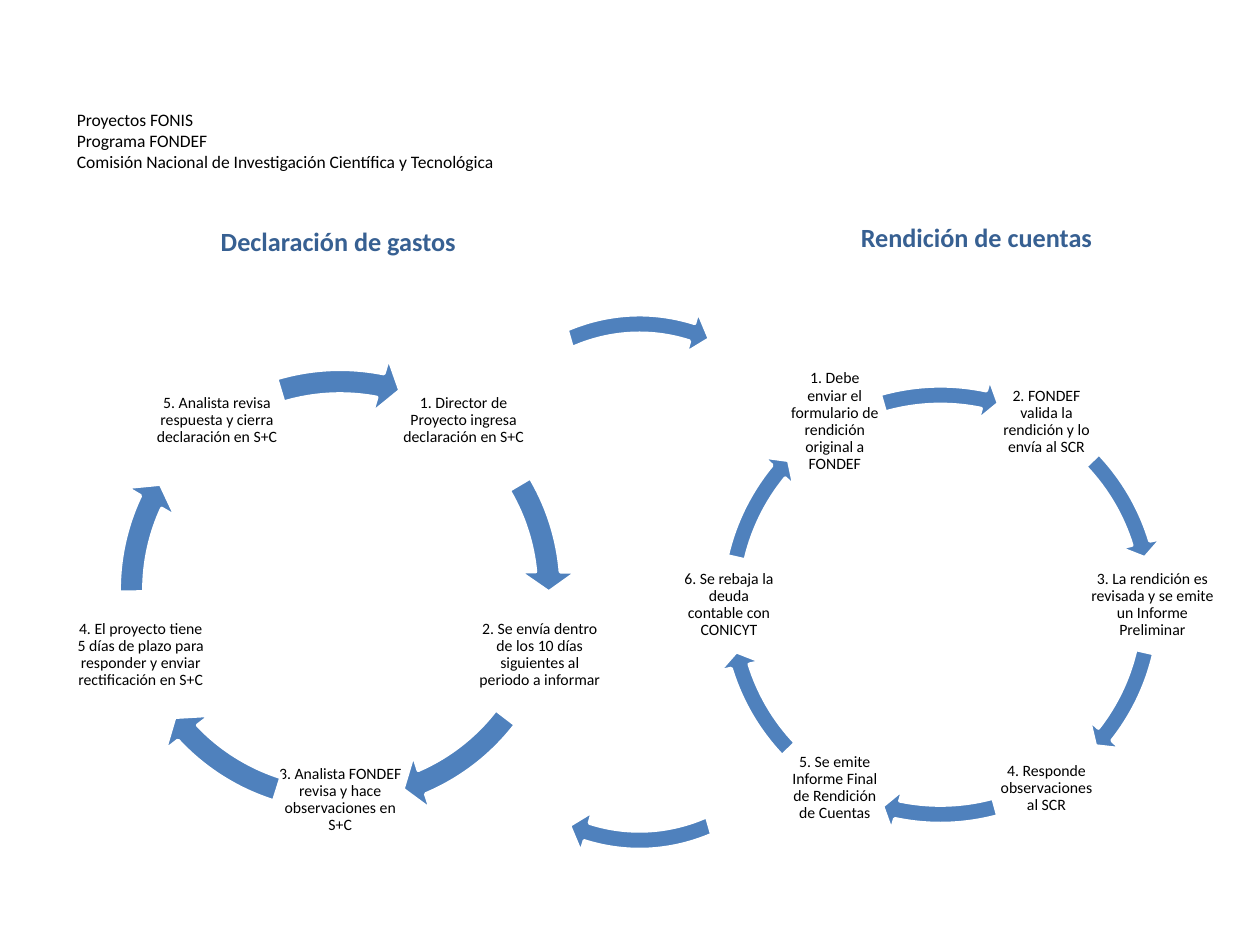
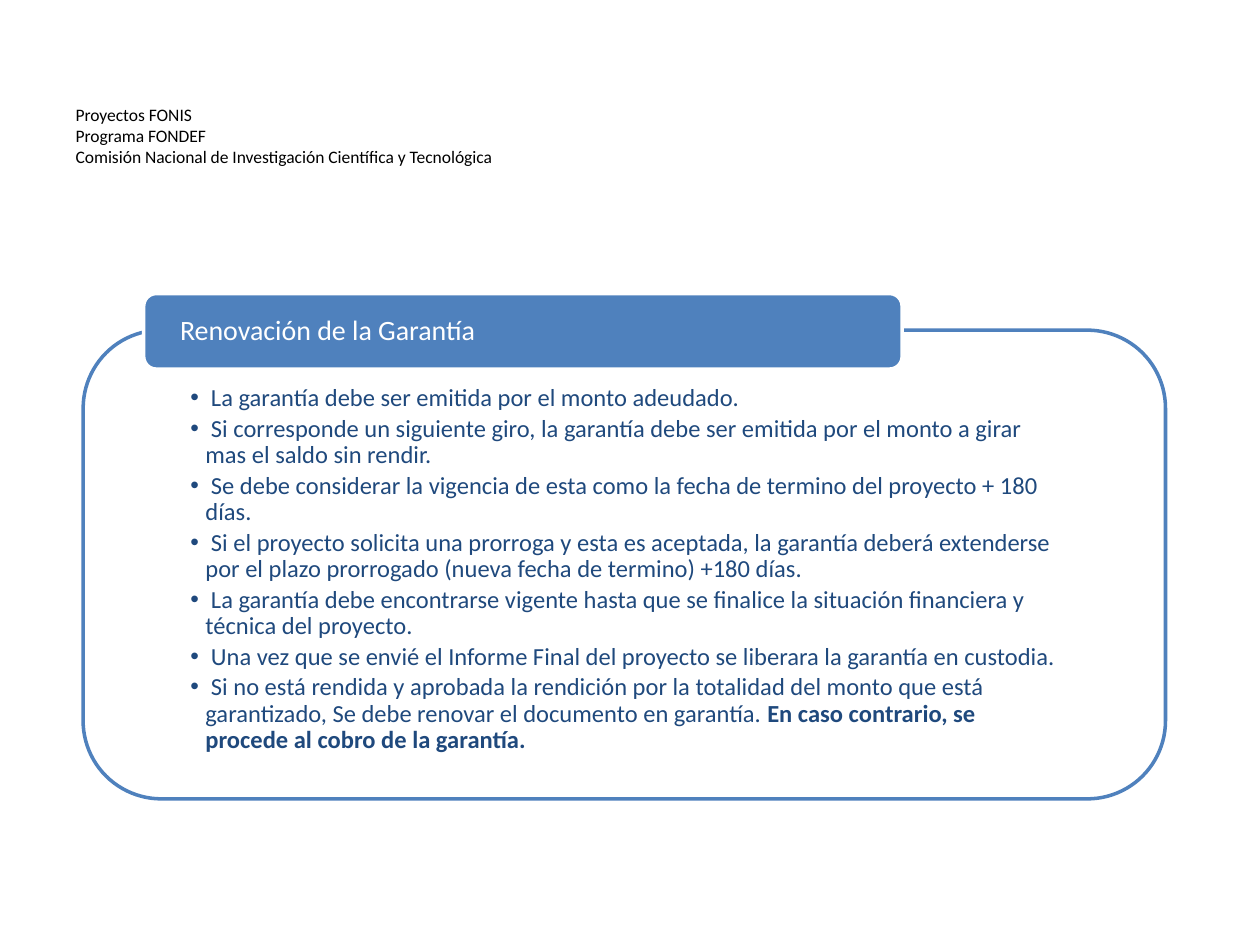
import math

import pptx
import pptx.dml.color
import pptx.enum.shapes
import pptx.enum.text
import pptx.util
from lxml import etree
from pptx.oxml.ns import qn

# Shared colours, font and grid (100 columns by 75 rows)
BLUE = pptx.dml.color.RGBColor(0x4F, 0x81, 0xBD)
HEADING_BLUE = pptx.dml.color.RGBColor(0x37, 0x60, 0x92)
LIST_BLUE = pptx.dml.color.RGBColor(0x1F, 0x49, 0x7D)
BLACK = pptx.dml.color.RGBColor(0, 0, 0)
WHITE = pptx.dml.color.RGBColor(0xFF, 0xFF, 0xFF)
FONT = "Calibri"
SLIDE_WIDTH = pptx.util.Inches(10)
SLIDE_HEIGHT = pptx.util.Inches(7.5)
CELL = SLIDE_WIDTH / 100

SHAPE = pptx.enum.shapes.MSO_SHAPE
ALIGN = pptx.enum.text.PP_ALIGN
ANCHOR = pptx.enum.text.MSO_ANCHOR
AUTO_SIZE = pptx.enum.text.MSO_AUTO_SIZE

AGENCY = ("Proyectos FONIS\vPrograma FONDEF\v"
          "Comisión Nacional de Investigación Científica y Tecnológica")

# Each step: text, label width, start and end angle of the arrow that leaves it
EXPENSE_STEPS = [
    ("1. Director de Proyecto ingresa declaración en S+C", 10, 329.4, 354.9),
    ("2. Se envía dentro de los 10 días siguientes al periodo a informar",
     10, 37.5, 66.9),
    ("3. Analista FONDEF revisa y hace observaciones en S+C", 10, 107.5, 136.9),
    ("4. El proyecto tiene 5 días de plazo para responder y enviar "
     "rectificación en S+C", 10.7, 179.5, 205),
    ("5. Analista revisa respuesta y cierra declaración en S+C",
     10, 253.3, 281.1),
]
ACCOUNT_STEPS = [
    ("1. Debe enviar el formulario de rendición original a FONDEF",
     7.5, 254, 281.9),
    ("2. FONDEF valida la rendición y lo envía al SCR", 7.5, 316.4, 342.9),
    ("3. La rendición es revisada y se emite un Informe Preliminar",
     10.1, 12.9, 38.2),
    ("4. Responde observaciones al SCR", 8, 74.8, 101.9),
    ("5. Se emite Informe Final de Rendición de Cuentas", 7.5, 136.4, 162.9),
    ("6. Se rebaja la deuda contable con CONICYT", 7.5, 192.9, 219.4),
]
# Arrow thickness and head angle for each ring
WIDE_ARROW = (0.052, 5.59)
NARROW_ARROW = (0.04, 4.17)

GUARANTEE_RULES = [
    "La garantía debe ser emitida por el monto adeudado.",
    "Si corresponde un siguiente giro, la garantía debe ser emitida por el "
    "monto a girar mas el saldo sin rendir.",
    "Se debe considerar la vigencia de esta como la fecha de termino del "
    "proyecto + 180 días.",
    "Si el proyecto solicita una prorroga y esta es aceptada, la garantía "
    "deberá extenderse por el plazo prorrogado (nueva fecha de termino) "
    "+180 días.",
    "La garantía debe encontrarse vigente hasta que se finalice la situación "
    "financiera y técnica del proyecto.",
    "Una vez que se envié el Informe Final del proyecto se liberara la "
    "garantía en custodia.",
    "Si no está rendida y aprobada la rendición por la totalidad del monto "
    "que está garantizado, Se debe renovar el documento en garantía. ",
]
WARNING = "En caso contrario, se procede al cobro de la garantía."


def cells(*counts):
    return [round(count * CELL) for count in counts]


def move(placeholder, *box):
    (placeholder.left, placeholder.top,
     placeholder.width, placeholder.height) = cells(*box)


def set_margins(frame, left, top, right, bottom):
    (frame.margin_left, frame.margin_top,
     frame.margin_right, frame.margin_bottom) = cells(left, top, right, bottom)


def style(paragraph, size, color, align=ALIGN.LEFT, bold=False, spacing=None):
    paragraph.alignment = align
    paragraph.line_spacing = spacing
    for run in paragraph.runs:
        run.font.name = FONT
        run.font.size = pptx.util.Pt(size)
        run.font.color.rgb = color
        run.font.bold = bold


def add_agency_title(slide, left, height):
    title = slide.shapes.title
    move(title, left, 6, 78.1, height)
    frame = title.text_frame
    frame.text = AGENCY
    frame.auto_size = AUTO_SIZE.NONE
    frame.vertical_anchor = ANCHOR.MIDDLE
    style(frame.paragraphs[0], 10, BLACK)


def add_label(slide, text, box, size, color, bold=False, spacing=None):
    label = slide.shapes.add_textbox(*cells(*box))
    frame = label.text_frame
    frame.word_wrap = True
    frame.text = text
    style(frame.paragraphs[0], size, color, ALIGN.CENTER, bold, spacing)
    return frame


def add_blue_shape(slide, kind, box, fill=BLUE, line=WHITE):
    shape = slide.shapes.add_shape(kind, *cells(*box))
    shape.shadow.inherit = False
    shape.fill.solid()
    shape.fill.fore_color.rgb = fill
    shape.line.color.rgb = line
    shape.line.width = pptx.util.Pt(2)
    return shape


def add_arc_arrow(slide, box, look, start, end, rotation=0):
    thickness, head = look
    arrow = add_blue_shape(slide, SHAPE.CIRCULAR_ARROW, box)
    arrow.rotation = rotation
    # Adjustments count 60000ths of a degree in units of 100000
    values = [thickness, head * 0.6, end * 0.6, start * 0.6, thickness * 1.17]
    for index, value in enumerate(values):
        arrow.adjustments[index] = value


def add_cycle(slide, steps, center, radius, first_angle, label_height,
              arrow_size, look):
    center_x, center_y = center
    arrow_box = (center_x - arrow_size / 2, center_y - arrow_size / 2,
                 arrow_size, arrow_size)
    for index, (text, width, start, end) in enumerate(steps):
        angle = math.radians(first_angle + index * 360 / len(steps))
        x = center_x + radius * math.cos(angle)
        y = center_y + radius * math.sin(angle)
        label_box = (x - width / 2, y - label_height / 2, width, label_height)
        frame = add_label(slide, text, label_box, 9, BLACK, spacing=0.9)
        frame.vertical_anchor = ANCHOR.MIDDLE
        set_margins(frame, 0.1, 0.1, 0.1, 0.1)
        add_arc_arrow(slide, arrow_box, look, start, end)


def add_bullet(paragraph, indent):
    properties = paragraph._p.get_or_add_pPr()
    properties.set("marL", str(indent))
    properties.set("indent", str(-indent))
    etree.SubElement(properties, qn("a:buChar")).set("char", "•")


def fill_rules(body):
    move(body, 8.4, 28.1, 82.3, 33.6)
    frame = body.text_frame
    frame.text = "\n".join(" " + rule for rule in GUARANTEE_RULES)
    frame.auto_size = AUTO_SIZE.NONE
    frame.vertical_anchor = ANCHOR.TOP
    set_margins(frame, 6.7, 2.5, 6.7, 1.1)
    warning = frame.paragraphs[-1].add_run()
    warning.text = WARNING
    for rule in frame.paragraphs:
        rule.level = 1
        add_bullet(rule, cells(1.2)[0])
        style(rule, 14, LIST_BLUE, spacing=0.9)
        rule.space_before = pptx.util.Pt(0)
        rule.space_after = pptx.util.Pt(2.3)
    warning.font.bold = True


def build_cycles(deck):
    slide = deck.slides.add_slide(deck.slide_layouts[5])
    add_agency_title(slide, 5.1, 10.3)
    # Expense declaration
    add_label(slide, "Declaración de gastos", (5.9, 17.4, 41.9, 3.5),
              15, HEADING_BLUE, bold=True)
    add_cycle(slide, EXPENSE_STEPS, (27, 46.85), 16.65, -54, 10,
              37.7, WIDE_ARROW)
    # Rendering of accounts
    add_label(slide, "Rendición de cuentas", (59.2, 17.1, 36.6, 3.5),
              15, HEADING_BLUE, bold=True)
    add_cycle(slide, ACCOUNT_STEPS, (74.65, 48), 16.8, -120, 7.5,
              36.7, NARROW_ARROW)
    # Arrows between the two cycles
    for rotation in (0, 180):
        add_arc_arrow(slide, (32.4, 24, 36.7, 44.4), NARROW_ARROW,
                      254, 281.9, rotation)


def build_guarantee(deck):
    slide = deck.slides.add_slide(deck.slide_layouts[1])
    add_agency_title(slide, 5, 9.5)
    # Outlined panel behind the list
    body = slide.placeholders[1]
    panel = add_blue_shape(slide, SHAPE.ROUNDED_RECTANGLE,
                           (6.6, 26.2, 85.9, 37.2), WHITE, BLUE)
    body.element.addprevious(panel.element)
    fill_rules(body)
    # Heading tab
    tab = add_blue_shape(slide, SHAPE.ROUNDED_RECTANGLE, (11.4, 23.3, 60.2, 6))
    tab.text_frame.text = "Renovación de la Garantía"
    tab.text_frame.vertical_anchor = ANCHOR.MIDDLE
    set_margins(tab.text_frame, 2.6, 0, 2.6, 0)
    style(tab.text_frame.paragraphs[0], 16, WHITE, spacing=0.9)


def main():
    deck = pptx.Presentation()
    deck.slide_width = SLIDE_WIDTH
    deck.slide_height = SLIDE_HEIGHT
    build_cycles(deck)
    build_guarantee(deck)
    deck.save("out.pptx")


if __name__ == "__main__":
    main()
